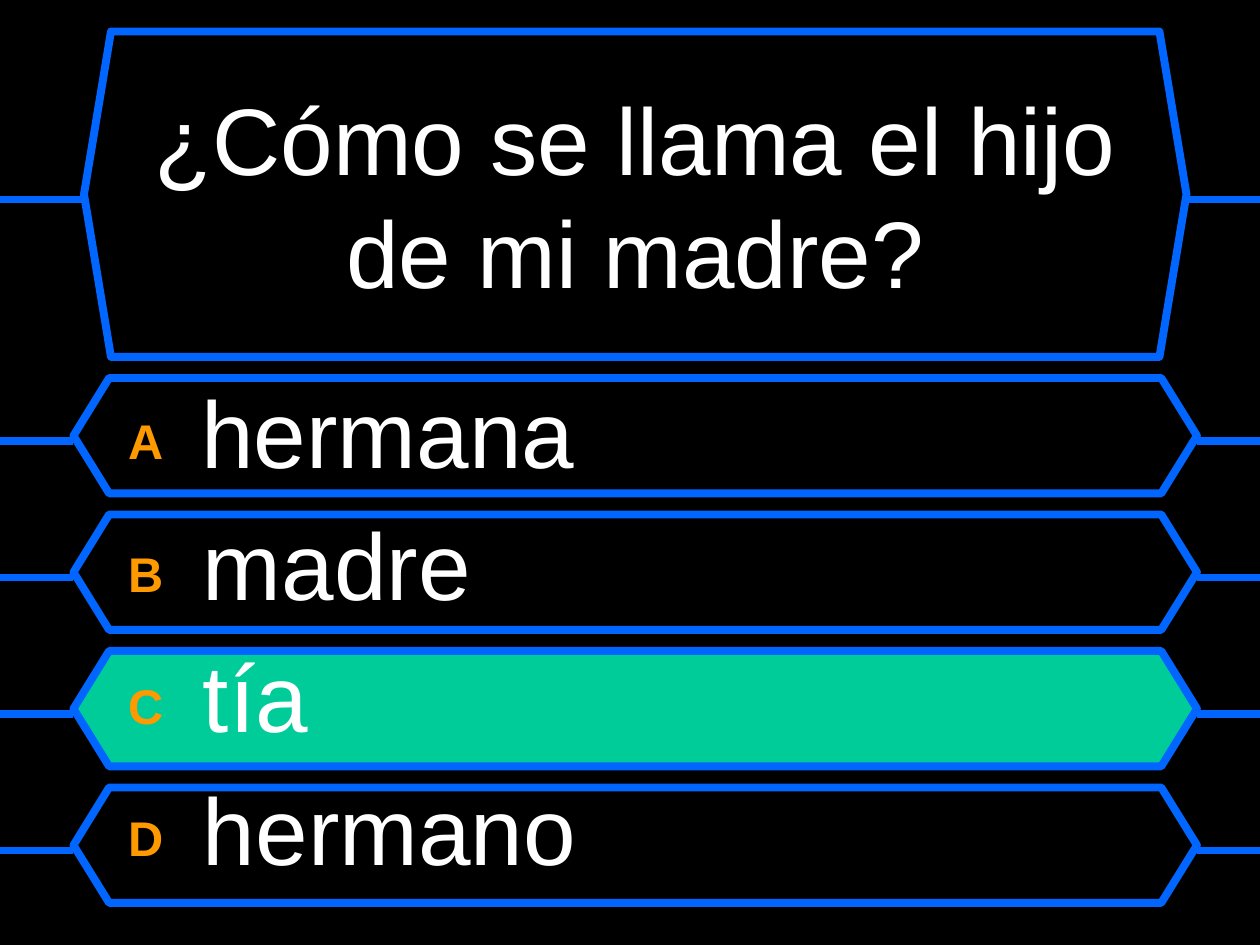
from lxml.etree import SubElement
from pptx import Presentation
from pptx.dml.color import RGBColor
from pptx.enum.shapes import MSO_CONNECTOR, MSO_SHAPE
from pptx.enum.text import MSO_ANCHOR, MSO_AUTO_SIZE, PP_ALIGN
from pptx.oxml.ns import qn
from pptx.util import Inches, Pt

COLUMNS, ROWS = 120, 90
BLACK, WHITE, BLUE, GREEN, ORANGE = "000000", "FFFFFF", "0066FF", "00CC99", "FF9900"
QUESTION = "¿Cómo se llama el hijo de mi madre?"
ANSWERS = ["hermana", "madre", "tía", "hermano"]
CORRECT = "tía"
FIRST_ROW, ROW_STEP = 36, 13


def grid(cells):
    """Convert grid cells of a twelfth of an inch to a length."""
    return Inches(cells / 12)


def color(hex_string):
    """Return the colour for a hex string."""
    return RGBColor.from_string(hex_string)


def style_line(line):
    """Give a line the blue frame style."""
    line.color.rgb = color(BLUE)
    line.width = Pt(4.5)


def add_frame(slide, left, top, width, height, slant, fill=BLACK):
    """Draw a hexagonal frame."""
    frame = slide.shapes.add_shape(
        MSO_SHAPE.HEXAGON, grid(left), grid(top), grid(width), grid(height))
    frame.adjustments[0] = slant
    frame.shadow.inherit = False
    frame.fill.solid()
    frame.fill.fore_color.rgb = color(fill)
    style_line(frame.line)


def add_side_lines(slide, row, left, right):
    """Join a frame to both edges of the slide."""
    for start, end in ((left, 0), (COLUMNS, right)):
        connector = slide.shapes.add_connector(
            MSO_CONNECTOR.STRAIGHT, grid(start), grid(row), grid(end), grid(row))
        style_line(connector.line)
        SubElement(connector.element.spPr, qn("a:effectLst"))


def place_text(box, left, top, width, height, anchor):
    """Move a placeholder to its grid cells, in front of the frames."""
    box.left, box.top = grid(left), grid(top)
    box.width, box.height = grid(width), grid(height)
    box.text_frame.word_wrap = True
    box.text_frame.auto_size = MSO_AUTO_SIZE.NONE
    box.text_frame.vertical_anchor = anchor
    box.element.getparent().append(box.element)


def format_span(span, size, hex_string, bold=False):
    """Set the font of a run."""
    span.font.name = "Arial"
    span.font.size = Pt(size)
    span.font.bold = bold
    span.font.color.rgb = color(hex_string)


def fill_question(box):
    """Write the question in the title."""
    box.text_frame.text = QUESTION
    para = box.text_frame.paragraphs[0]
    para.alignment = PP_ALIGN.CENTER
    format_span(para.runs[0], 54, WHITE)


def fill_answers(box):
    """Write the lettered answers in the body."""
    box.text_frame.text = "\n".join(f"{letter} " for letter in "ABCD")
    for para, answer in zip(box.text_frame.paragraphs, ANSWERS):
        letter = para.runs[0]
        format_span(letter, 48, ORANGE, bold=True)
        letter.font.fill.solid()
        letter.font.color.rgb = color(ORANGE)
        letter.font._element.set("baseline", "10000")
        span = para.add_run()
        span.text = f" {answer}"
        format_span(span, 54, WHITE)
        para.alignment = PP_ALIGN.LEFT
        SubElement(para._p.get_or_add_pPr(), qn("a:buNone"))


def main():
    """Build the quiz slide."""
    deck = Presentation()
    deck.slide_width, deck.slide_height = grid(COLUMNS), grid(ROWS)
    slide = deck.slides.add_slide(deck.slide_layouts[1])
    slide.background.fill.solid()
    slide.background.fill.fore_color.rgb = color(BLACK)

    add_frame(slide, 8, 3, 105, 31, 0.083)
    add_side_lines(slide, 19, 8, 113)
    for index, answer in enumerate(ANSWERS):
        top = FIRST_ROW + index * ROW_STEP
        add_frame(slide, 7, top, 107, 11, 0.309, GREEN if answer == CORRECT else BLACK)
        add_side_lines(slide, top + 6, 7, 114)

    title, body = slide.placeholders
    place_text(title, 10, 5, 101, 27, MSO_ANCHOR.MIDDLE)
    fill_question(title)
    place_text(body, 11, 35, 100, 52, MSO_ANCHOR.TOP)
    fill_answers(body)
    deck.save("out.pptx")


if __name__ == "__main__":
    main()
